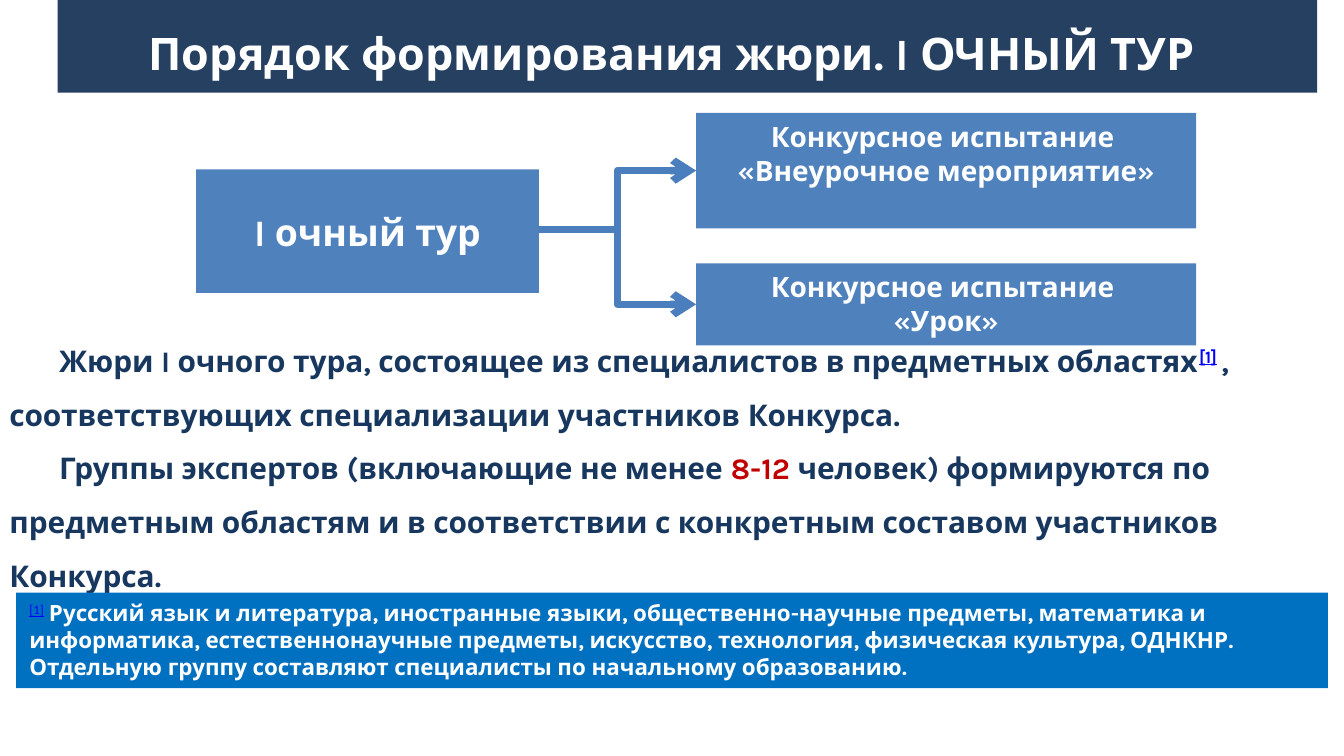
import pptx
import pptx.dml.color
import pptx.enum.shapes
import pptx.enum.text
import pptx.oxml.ns
import pptx.util
from lxml import etree
from pptx.util import Inches

ANCHOR = pptx.enum.text.MSO_ANCHOR
ALIGN = pptx.enum.text.PP_ALIGN
AUTO = pptx.enum.text.MSO_AUTO_SIZE
SHAPES = pptx.enum.shapes

TIGHT = {"margin_left": Inches(0.07), "margin_right": Inches(0.07),
         "margin_top": Inches(0.04), "margin_bottom": Inches(0.04)}
CENTER = {"alignment": ALIGN.CENTER}
NAVY, WHITE, RED, LINK = "17375E", "FFFFFF", "C00000", "0000FF"
BLUE = "4F81BD"


def color(value):
    return pptx.dml.color.RGBColor.from_string(value)


def apply_format(target, values):
    for name, value in values.items():
        setattr(target, name, value)


def add_child(parent, tag, **attributes):
    return etree.SubElement(parent, pptx.oxml.ns.qn(tag), attributes)


def style(size, shade=WHITE, **extra):
    return {"size": pptx.util.Pt(size), "name": "Karla", "bold": True,
            "shade": shade, **extra}


def add_span(para, text, values):
    span = para.add_run()
    span.text = text
    font = dict(values)
    span.font.color.rgb = color(font.pop("shade"))
    raised = font.pop("raised", False)
    apply_format(span.font, font)
    if raised:
        span._r.get_or_add_rPr().set("baseline", "30000")


def write(box, paragraphs, frame_format, para_format, indent=0):
    frame = box.text_frame
    apply_format(frame, {"word_wrap": True, **frame_format})
    for index, spans in enumerate(paragraphs):
        para = frame.paragraphs[0] if index == 0 else frame.add_paragraph()
        properties = para._p.get_or_add_pPr()
        properties.set("marL", "0")
        properties.set("indent", str(Inches(indent)))
        add_child(properties, "a:buNone")
        apply_format(para, {"space_before": pptx.util.Pt(0), **para_format})
        for text, values in spans:
            add_span(para, text, values)


def place(box, left, top, width, height):
    apply_format(box, {"left": Inches(left), "top": Inches(top),
                       "width": Inches(width), "height": Inches(height)})


def add_block(page, area, fill):
    box = page.shapes.add_shape(SHAPES.MSO_SHAPE.RECTANGLE, *map(Inches, area))
    box.shadow.inherit = False
    box.fill.solid()
    box.fill.fore_color.rgb = color(fill)
    box.line.fill.background()
    return box


def add_stage(page, area, lines, size, anchor):
    box = add_block(page, area, BLUE)
    write(box, [[(line, style(size))] for line in lines],
          {"vertical_anchor": anchor}, CENTER)


def add_arrow(page, start, end):
    arrow = page.shapes.add_connector(
        SHAPES.MSO_CONNECTOR.ELBOW, *map(Inches, start + end))
    arrow.line.color.rgb = color("4B7EBC")
    arrow.line.width = pptx.util.Pt(4)
    add_child(arrow.line._get_or_add_ln(), "a:tailEnd", type="arrow")
    add_child(arrow._element.spPr, "a:effectLst")


def add_title(page):
    title = page.shapes.title
    bar = add_block(page, (0.43, -0.01, 9.37, 0.7), "254061")
    title._element.addprevious(bar._element)
    place(title, 0.94, 0.15, 8.12, 0.37)
    write(title, [[("Порядок формирования жюри. I ОЧНЫЙ ТУР", style(24))]],
          {**TIGHT, "vertical_anchor": ANCHOR.TOP, "auto_size": AUTO.NONE}, CENTER)


def add_body(page):
    body = page.placeholders[1]
    place(body, 0, 2.57, 10, 1.69)
    plain = style(16, NAVY)
    paragraphs = [
        [("Жюри I очного тура, состоящее из специалистов в предметных областях", plain),
         ("[1]", style(16, LINK, underline=True, raised=True)),
         (" ", style(16, NAVY, raised=True)),
         (", соответствующих специализации участников Конкурса.", plain)],
        [("Группы экспертов (включающие не менее ", plain),
         ("8-12 ", style(16, RED)),
         ("человек) формируются по предметным областям и в соответствии "
          "с конкретным составом участников Конкурса.", plain)],
    ]
    write(body, paragraphs,
          {**TIGHT, "vertical_anchor": ANCHOR.MIDDLE,
           "auto_size": AUTO.SHAPE_TO_FIT_TEXT},
          {"line_spacing": 1.5, "alignment": ALIGN.LEFT}, indent=0.37)


def add_footnote(page):
    box = add_block(page, (0.12, 4.41, 9.76, 0.71), "0070C0")
    regular = {"name": "Calibri", "bold": False}
    mark = {**style(12, LINK, underline=True, raised=True), **regular}
    gap = {**style(12, "000000"), **regular}
    note = ("Русский язык и литература, иностранные языки, общественно-научные "
            "предметы, математика и информатика, естественнонаучные предметы, "
            "искусство, технология, физическая культура, ОДНКНР. Отдельную группу "
            "составляют специалисты по начальному образованию.")
    write(box, [[("[1]", mark), (" ", gap), (note, style(12))]],
          {"vertical_anchor": ANCHOR.TOP}, {"alignment": ALIGN.LEFT})


def add_scheme(page):
    trials = [("«Урок»", 1.96, 0.61), ("«Внеурочное мероприятие»", 0.84, 0.86)]
    for name, top, height in trials:
        add_stage(page, (5.18, top, 3.72, height),
                  ["Конкурсное испытание ", name], 15, ANCHOR.TOP)
    add_stage(page, (1.46, 1.26, 2.55, 0.92), ["I очный тур"], 20, ANCHOR.MIDDLE)
    for name, top, height in trials:
        add_arrow(page, (4.01, 1.71), (5.18, top + height / 2))


def main():
    deck = pptx.Presentation()
    width = Inches(10)
    apply_format(deck, {"slide_width": width, "slide_height": width * 9 // 16})
    page = deck.slides.add_slide(deck.slide_layouts[1])
    add_title(page)
    add_body(page)
    add_footnote(page)
    add_scheme(page)
    deck.save("out.pptx")


if __name__ == "__main__":
    main()
